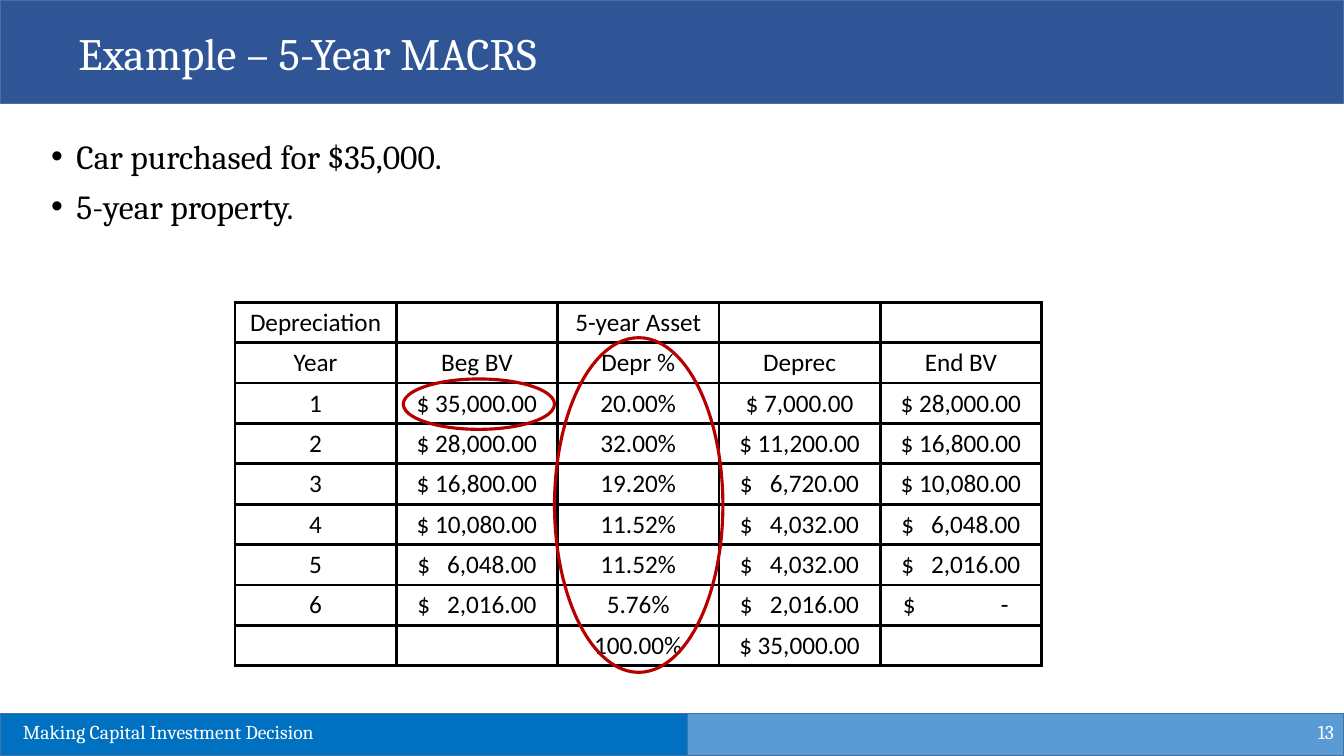
from dataclasses import dataclass

from lxml import etree
from pptx import Presentation
from pptx.dml.color import RGBColor
from pptx.enum.shapes import MSO_SHAPE
from pptx.enum.text import MSO_ANCHOR, PP_ALIGN
from pptx.oxml.ns import qn
from pptx.util import Inches, Pt

RECTANGLE, OVAL = MSO_SHAPE.RECTANGLE, MSO_SHAPE.OVAL
LEFT, CENTER, RIGHT = PP_ALIGN.LEFT, PP_ALIGN.CENTER, PP_ALIGN.RIGHT
TOP, MIDDLE = MSO_ANCHOR.TOP, MSO_ANCHOR.MIDDLE


@dataclass(frozen=True)
class Theme:
    header: str = "2F5597"
    footer_dark: str = "0070C0"
    footer_light: str = "5B9BD5"
    band_line: str = "43739E"
    highlight: str = "B60000"
    black: str = "000000"
    white: str = "FFFFFF"
    text_font: str = "Cambria"
    table_font: str = "Calibri"
    title_size: int = 32
    body_size: int = 24
    table_size: int = 18
    footer_size: int = 14
    band_width: float = 1
    rule_width: float = 2.25


THEME = Theme()

BULLETS = ["Car purchased for $35,000.", "5-year property."]

DEPRECIATION_ROWS = [
    ["Depreciation", "", "5-year Asset", "", ""],
    ["Year", "Beg BV", "Depr %", "Deprec", "End BV"],
    ["1", "$ 35,000.00", "20.00%", "$ 7,000.00", "$ 28,000.00"],
    ["2", "$ 28,000.00", "32.00%", "$ 11,200.00", "$ 16,800.00"],
    ["3", "$ 16,800.00", "19.20%", "$   6,720.00", "$ 10,080.00"],
    ["4", "$ 10,080.00", "11.52%", "$   4,032.00", "$   6,048.00"],
    ["5", "$   6,048.00", "11.52%", "$   4,032.00", "$   2,016.00"],
    ["6", "$   2,016.00", "5.76%", "$   2,016.00", "$               -"],
    ["", "", "100.00%", "$ 35,000.00", ""],
]


def box(left, top, width, height):
    return Inches(left), Inches(top), Inches(width), Inches(height)


def style_font(font, name, size, color):
    font.name = name
    font.size = Pt(size)
    font.color.rgb = RGBColor.from_string(color)


def add_band(slide, position, color):
    shape = slide.shapes.add_shape(RECTANGLE, *box(*position))
    shape.shadow.inherit = False
    shape.fill.solid()
    shape.fill.fore_color.rgb = RGBColor.from_string(color)
    shape.line.color.rgb = RGBColor.from_string(THEME.band_line)
    shape.line.width = Pt(THEME.band_width)


def add_highlight(slide, position):
    shape = slide.shapes.add_shape(OVAL, *box(*position))
    shape.shadow.inherit = False
    shape.fill.background()
    shape.line.color.rgb = RGBColor.from_string(THEME.highlight)
    shape.line.width = Pt(THEME.rule_width)


def add_text(slide, position, text, size, color, align=LEFT, anchor=TOP):
    text_frame = slide.shapes.add_textbox(*box(*position)).text_frame
    text_frame.word_wrap = True
    text_frame.vertical_anchor = anchor
    text_frame.text = text
    for paragraph in text_frame.paragraphs:
        paragraph.alignment = align
        for run in paragraph.runs:
            style_font(run.font, THEME.text_font, size, color)
    return text_frame


def add_bullets(slide, position, items):
    text_frame = add_text(slide, position, "\n".join(items), THEME.body_size, THEME.black)
    for paragraph in text_frame.paragraphs:
        paragraph.line_spacing = 0.9
        paragraph.space_before = Pt(10)
        properties = paragraph._p.get_or_add_pPr()
        properties.set("marL", str(Inches(0.25)))
        properties.set("indent", str(Inches(-0.25)))
        etree.SubElement(properties, qn("a:buFont"), typeface="Arial")
        etree.SubElement(properties, qn("a:buChar"), char="•")


def set_borders(cell):
    properties = cell._tc.get_or_add_tcPr()
    # Border lines must stand before the fill
    for index, side in enumerate(("a:lnL", "a:lnR", "a:lnT", "a:lnB")):
        line = etree.Element(qn(side), w=str(Pt(THEME.rule_width)))
        fill = etree.SubElement(line, qn("a:solidFill"))
        etree.SubElement(fill, qn("a:srgbClr"), val=THEME.black)
        properties.insert(index, line)


def add_table(slide, position, rows):
    frame = slide.shapes.add_table(len(rows), len(rows[0]), *box(*position))
    table = frame.table
    table.first_row = False
    table.horz_banding = False
    for row_index, row in enumerate(rows):
        for column_index, text in enumerate(row):
            cell = table.cell(row_index, column_index)
            cell.text_frame.text = text
            cell.fill.background()
            set_borders(cell)
            paragraph = cell.text_frame.paragraphs[0]
            paragraph.alignment = CENTER
            style_font(paragraph.font, THEME.table_font, THEME.table_size, THEME.black)
            for run in paragraph.runs:
                style_font(run.font, THEME.table_font, THEME.table_size, THEME.black)
    return table


def main():
    presentation = Presentation()
    presentation.slide_width = Inches(13.33)
    presentation.slide_height = Inches(7.5)
    slide = presentation.slides.add_slide(presentation.slide_layouts[6])

    # Header
    add_band(slide, (0, 0, 13.33, 1.03), THEME.header)
    add_text(slide, (0.68, 0.21, 12.08, 0.64), "Example – 5-Year MACRS",
             THEME.title_size, THEME.white)

    # Body
    add_bullets(slide, (0.41, 1.34, 12.59, 1.7), BULLETS)

    # Footer
    add_band(slide, (0, 7.08, 6.82, 0.42), THEME.footer_dark)
    add_band(slide, (6.82, 7.08, 6.51, 0.42), THEME.footer_light)
    add_text(slide, (10.33, 7.06, 3, 0.4), "13",
             THEME.footer_size, THEME.white, RIGHT, MIDDLE)
    add_text(slide, (0.13, 7.09, 5.54, 0.34), "Making Capital Investment Decision",
             THEME.footer_size, THEME.white)

    # Depreciation schedule, with the final book value shifted to the left
    table = add_table(slide, (2.33, 3, 8, 3.6), DEPRECIATION_ROWS)
    table.cell(7, 4).margin_left = 0

    # Highlights on the purchase price and the depreciation rates
    add_highlight(slide, (4, 3.76, 1.5, 0.5))
    add_highlight(slide, (5.5, 3.35, 1.67, 3.32))

    presentation.save("out.pptx")


if __name__ == "__main__":
    main()
